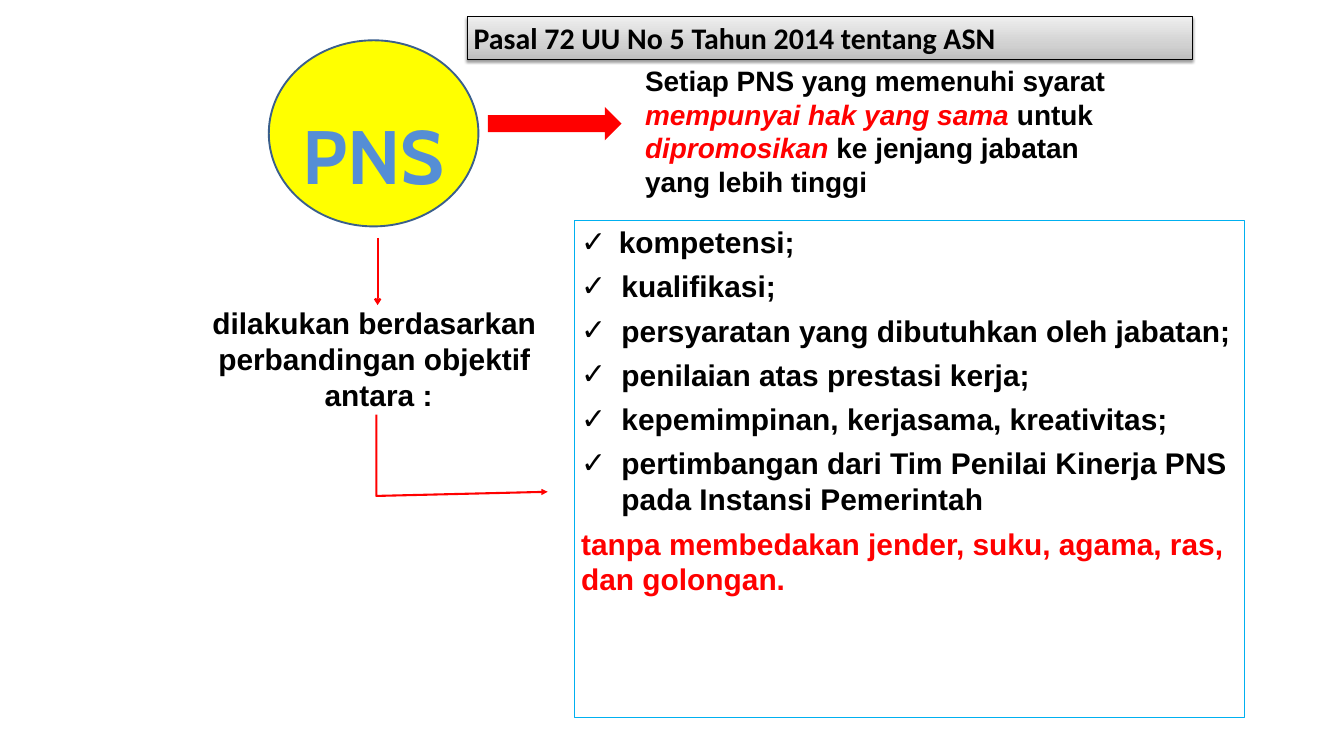
from lxml import etree
from pptx import Presentation
from pptx.dml.color import RGBColor
from pptx.enum import shapes, text
from pptx.oxml import ns
from pptx.util import Pt

COLORS = {
    "black": "000000",
    "red": "FF0000",
    "yellow": "FFFF00",
    "navy": "3A5F8C",
    "blue": "558ED5",
    "cyan": "00B0F0",
}
BAR_STOPS = [(0, "BDBDBD"), (35, "D1D1D1"), (100, "EEEEEE")]
CRITERIA = [
    "kompetensi;",
    "kualifikasi;",
    "persyaratan yang dibutuhkan oleh jabatan;",
    "penilaian atas prestasi kerja;",
    "kepemimpinan, kerjasama, kreativitas;",
    "pertimbangan dari Tim Penilai Kinerja PNS pada Instansi Pemerintah",
]


def add_node(parent, tag, **attributes):
    return etree.SubElement(parent, ns.qn(tag), attributes)


class SlideBuilder:
    def __init__(self, slide):
        self.slide = slide
        self.font = "Arial"
        self.size = 32

    def color(self, name):
        return RGBColor.from_string(COLORS[name])

    def shape(self, kind, box, fill=None, line=None, width=0.75):
        shape = self.slide.shapes.add_shape(kind, *map(Pt, box))
        shape.shadow.inherit = False
        self.paint(shape, fill, line, width)
        return shape

    def paint(self, shape, fill, line, width):
        if fill:
            shape.fill.solid()
            shape.fill.fore_color.rgb = self.color(fill)
        else:
            shape.fill.background()
        if line:
            shape.line.color.rgb = self.color(line)
            shape.line.width = Pt(width)
        else:
            shape.line.fill.background()

    def textbox(self, box, paragraphs, **style):
        shape = self.slide.shapes.add_textbox(*map(Pt, box))
        self.add_text(shape, paragraphs, **style)
        return shape

    def add_text(self, shape, paragraphs, align=text.PP_ALIGN.LEFT,
                 anchor=text.MSO_ANCHOR.TOP, font=None, size=None):
        frame = shape.text_frame
        frame.word_wrap = True
        frame.vertical_anchor = anchor
        for index, runs in enumerate(paragraphs):
            paragraph = frame.add_paragraph() if index else frame.paragraphs[0]
            paragraph.alignment = align
            for content, color, italic in runs:
                run = paragraph.add_run()
                run.text = content
                run.font.name = font or self.font
                run.font.size = Pt(size or self.size)
                run.font.bold = True
                run.font.italic = italic
                run.font.color.rgb = self.color(color)

    def bullet(self, paragraph, indent):
        properties = paragraph._p.get_or_add_pPr()
        properties.set("marL", str(Pt(indent)))
        properties.set("indent", str(-Pt(indent)))
        add_node(properties, "a:buFont", typeface="Arial")
        add_node(properties, "a:buChar", char="✓")

    def shadow(self, effects, blur, distance, opacity):
        outer = add_node(effects, "a:outerShdw", blurRad=str(Pt(blur)),
                         dist=str(Pt(distance)), dir="5400000", rotWithShape="0")
        shade = add_node(outer, "a:srgbClr", val=COLORS["black"])
        add_node(shade, "a:alpha", val=str(opacity * 1000))

    def gradient(self, shape, stops, angle):
        shape.fill.gradient()
        shape.fill.gradient_angle = angle
        stop_list = shape.element.find(".//" + ns.qn("a:gsLst"))
        for stop in list(stop_list):
            stop_list.remove(stop)
        for position, color in stops:
            stop = add_node(stop_list, "a:gs", pos=str(position * 1000))
            add_node(stop, "a:srgbClr", val=color)

    def arrowhead(self, shape, kind):
        add_node(shape.element.find(".//" + ns.qn("a:ln")), "a:tailEnd", type=kind)

    def arrow(self, start, end, color, width):
        connector = self.slide.shapes.add_connector(
            shapes.MSO_CONNECTOR.STRAIGHT, *map(Pt, start + end))
        connector.line.color.rgb = self.color(color)
        connector.line.width = Pt(width)
        self.arrowhead(connector, "arrow")
        add_node(connector.element.spPr, "a:effectLst")

    def bent_arrow(self, points, color, width):
        corners = [(Pt(x), Pt(y)) for x, y in points]
        builder = self.slide.shapes.build_freeform(*corners[0])
        builder.add_line_segments(corners[1:], close=False)
        shape = builder.convert_to_shape()
        shape.shadow.inherit = False
        self.paint(shape, None, color, width)
        self.arrowhead(shape, "triangle")


def main():
    presentation = Presentation()
    presentation.slide_width = Pt(1440)
    presentation.slide_height = Pt(810)
    slide = presentation.slides.add_slide(presentation.slide_layouts[6])
    builder = SlideBuilder(slide)
    kinds = shapes.MSO_SHAPE
    center = text.PP_ALIGN.CENTER
    middle = text.MSO_ANCHOR.MIDDLE

    criteria = builder.shape(kinds.RECTANGLE, (615.6, 236.2, 717.8, 532.8), line="cyan")
    closing = "tanpa membedakan jender, suku, agama, ras, dan golongan."
    builder.add_text(criteria, [[(item, "black", False)] for item in CRITERIA]
                     + [[(closing, "red", False)]])
    paragraphs = criteria.text_frame.paragraphs
    paragraphs[0].space_before = Pt(18)
    for paragraph in paragraphs:
        paragraph.space_after = Pt(9)
    for index, paragraph in enumerate(paragraphs[:-1]):
        builder.bullet(paragraph, 43.2 if index else 40.3)

    builder.shape(kinds.OVAL, (288, 43.2, 224.6, 199.4), "yellow", "navy", 2)
    label = builder.textbox((292.3, 116.6, 216, 96.5), [[("PNS", "blue", False)]],
                            align=center, anchor=middle, font="Cabin", size=81)
    run_properties = label.element.find(".//" + ns.qn("a:rPr"))
    effects = etree.Element(ns.qn("a:effectLst"))
    run_properties.find(ns.qn("a:solidFill")).addnext(effects)
    builder.shadow(effects, 4, 3, 80)

    builder.textbox((684, 64.8, 512.6, 152.6), [[
        ("Setiap PNS yang memenuhi syarat ", "black", False),
        ("mempunyai hak yang sama ", "red", True),
        ("untuk ", "black", False),
        ("dipromosikan ", "red", True),
        ("ke jenjang jabatan yang lebih tinggi", "black", False),
    ]], size=30)
    builder.shape(kinds.RIGHT_ARROW, (522.7, 114.5, 143.3, 36), "red")
    builder.arrow((404.6, 254.9), (404.6, 326.9), "red", 2.25)

    basis = ["dilakukan berdasarkan ", "perbandingan objektif ", "antara :"]
    builder.textbox((195.8, 323.3, 419.8, 123.8),
                    [[(line, "black", False)] for line in basis], align=center)
    builder.bent_arrow([(403.2, 444.2), (403.2, 531.4), (586.8, 527)], "red", 2.25)

    bar = builder.shape(kinds.RECTANGLE, (500.4, 18, 777.6, 46.1), line="black")
    builder.gradient(bar, BAR_STOPS, 90)
    builder.shadow(bar.element.spPr.find(ns.qn("a:effectLst")), 3.1, 1.6, 38)
    builder.add_text(bar, [[("Pasal 72 UU No 5 Tahun 2014 tentang ASN", "black", False)]],
                     font="Calibri")

    presentation.save("out.pptx")


if __name__ == "__main__":
    main()
